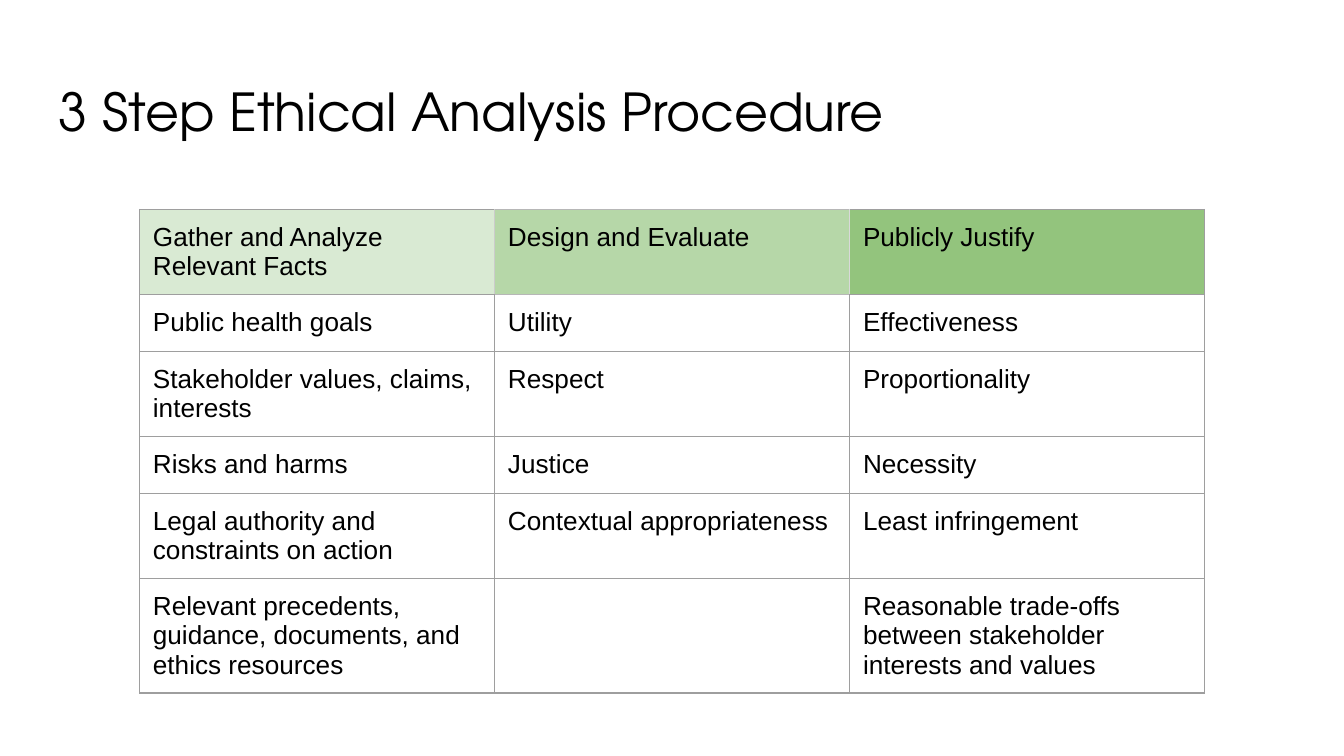
from dataclasses import dataclass, field
from typing import Optional

from lxml import etree
from pptx import Presentation
from pptx.dml.color import RGBColor
from pptx.enum.text import MSO_ANCHOR, MSO_AUTO_SIZE, PP_ALIGN
from pptx.oxml.ns import qn
from pptx.util import Cm, Pt

TOP = MSO_ANCHOR.TOP
LEFT = PP_ALIGN.LEFT
NO_AUTOFIT = MSO_AUTO_SIZE.NONE
TITLE_ONLY = 5


@dataclass(frozen=True)
class Theme:
    title_font: str = "TeX Gyre Adventor"
    body_font: str = "Arial"
    title_size: float = 28
    body_size: float = 14
    text: str = "000000"
    grid: str = "9E9E9E"
    grid_width: float = 0.75
    inset: Cm = Cm(0.25)


@dataclass(frozen=True)
class Step:
    heading: str
    fill: str
    items: list[str]
    edges: dict[str, str] = field(default_factory=dict)  # heading borders


THEME = Theme()

STEPS = [
    Step("Gather and Analyze Relevant Facts", "D9EAD3",
         ["Public health goals",
          "Stakeholder values, claims, interests",
          "Risks and harms",
          "Legal authority and constraints on action",
          "Relevant precedents, guidance, documents, and ethics resources"],
         {"R": "CCCCCC"}),
    Step("Design and Evaluate", "B6D7A8",
         ["Utility", "Respect", "Justice", "Contextual appropriateness", ""],
         {"L": "CCCCCC", "R": "D9D9D9", "T": "B7B7B7", "B": "B7B7B7"}),
    Step("Publicly Justify", "93C47D",
         ["Effectiveness", "Proportionality", "Necessity", "Least infringement",
          "Reasonable trade-offs between stakeholder interests and values"],
         {"L": "D9D9D9"}),
]


def add_run(p, text: str, font: str, size: float) -> None:
    p.alignment = LEFT
    r = p.add_run()
    r.text = text
    r.font.name = font
    r.font.size = Pt(size)
    r.font.color.rgb = RGBColor.from_string(THEME.text)


def set_insets(box) -> None:
    box.margin_left = box.margin_right = THEME.inset
    box.margin_top = box.margin_bottom = THEME.inset


def set_borders(cell, edges: dict[str, str]) -> None:
    """Put the four border lines ahead of the fill, as the schema asks."""
    tc_pr = cell._tc.get_or_add_tcPr()
    for i, side in enumerate("LRTB"):
        ln = etree.Element(qn(f"a:ln{side}"), w=str(Pt(THEME.grid_width)))
        fill = etree.SubElement(ln, qn("a:solidFill"))
        etree.SubElement(fill, qn("a:srgbClr"), val=edges.get(side, THEME.grid))
        tc_pr.insert(i, ln)


def fill_cell(cell, text: str, color: Optional[str], edges: dict[str, str]) -> None:
    set_insets(cell)
    cell.vertical_anchor = TOP
    if color:
        cell.fill.solid()
        cell.fill.fore_color.rgb = RGBColor.from_string(color)
    else:
        cell.fill.background()
    set_borders(cell, edges)
    if text:
        add_run(cell.text_frame.paragraphs[0], text, THEME.body_font, THEME.body_size)


def add_title(s, text: str) -> None:
    sp = s.shapes.title
    sp.left, sp.top, sp.width, sp.height = Cm(0.86), Cm(1.24), Cm(23.67), Cm(1.6)
    tf = sp.text_frame
    tf.word_wrap = True
    tf.auto_size = NO_AUTOFIT
    tf.vertical_anchor = TOP
    set_insets(tf)
    add_run(tf.paragraphs[0], text, THEME.title_font, THEME.title_size)


def add_steps_table(s, steps: list[Step]) -> None:
    col_width, row_height = Cm(6.71), Cm(1.07)
    rows, cols = len(steps[0].items) + 1, len(steps)
    table = s.shapes.add_table(rows, cols, Cm(2.64), Cm(3.96),
                               col_width * cols, row_height * rows).table
    table.first_row = table.horz_banding = False
    for col, step in enumerate(steps):
        fill_cell(table.cell(0, col), step.heading, step.fill, step.edges)
        for row, item in enumerate(step.items, start=1):
            # The first item shares its top border with the heading
            edges = {"T": step.edges.get("B", THEME.grid)} if row == 1 else {}
            fill_cell(table.cell(row, col), item, None, edges)


def main() -> None:
    prs = Presentation()
    prs.slide_width, prs.slide_height = Cm(25.4), Cm(14.29)
    s = prs.slides.add_slide(prs.slide_layouts[TITLE_ONLY])
    add_title(s, "3 Step Ethical Analysis Procedure")
    add_steps_table(s, STEPS)
    prs.save("out.pptx")


if __name__ == "__main__":
    main()
